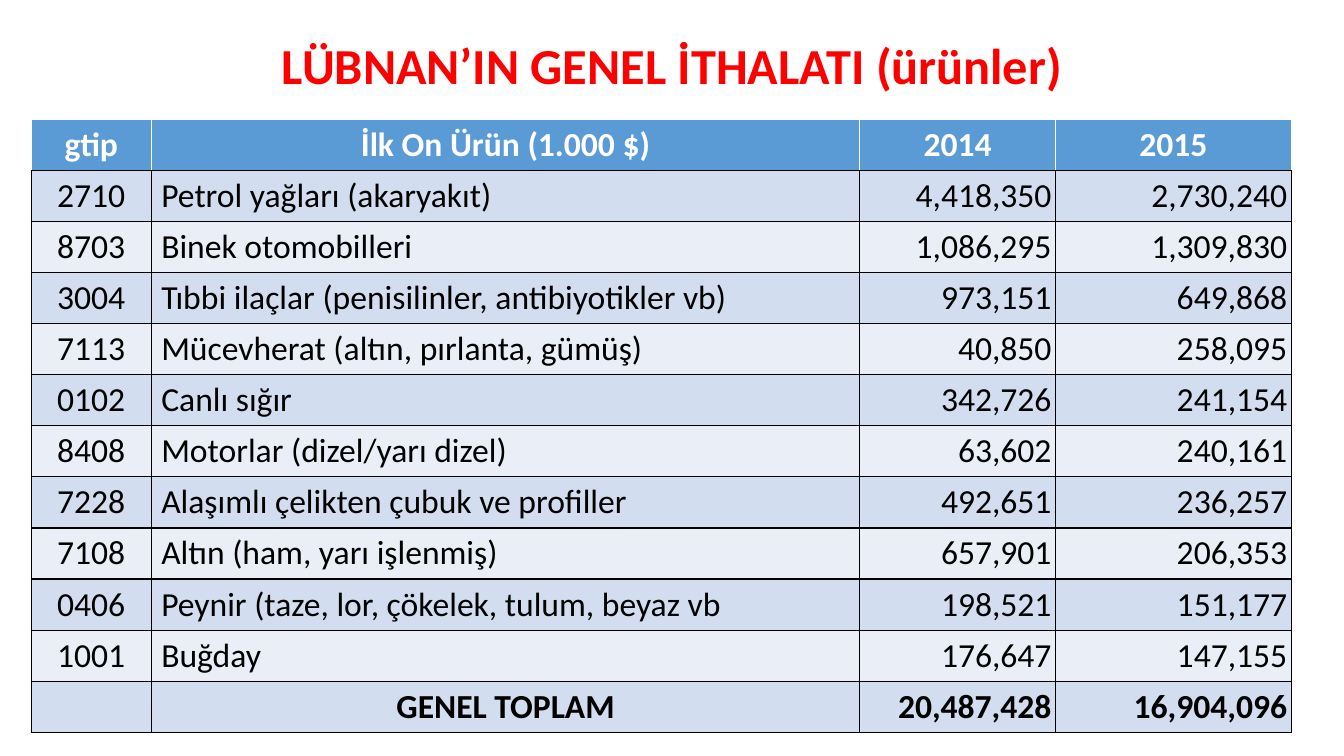
from dataclasses import dataclass

from lxml import etree
from pptx import Presentation
from pptx import util as u
from pptx.dml import color
from pptx.enum import text
from pptx.oxml import ns


@dataclass(frozen=True)
class Theme:
    font: str = "Calibri"
    title_size: int = 36
    table_size: int = 24
    title: str = "FF0000"
    header: str = "5B9BD5"
    dark_band: str = "D2DEEF"
    light_band: str = "EAEFF7"
    white: str = "FFFFFF"
    black: str = "000000"


THEME = Theme()
LEFT, CENTER, RIGHT = text.PP_ALIGN.LEFT, text.PP_ALIGN.CENTER, text.PP_ALIGN.RIGHT

TITLE = "LÜBNAN’IN GENEL İTHALATI (ürünler)"
HEADER = ("gtip", "İlk On Ürün (1.000 $)", "2014", "2015")
PRODUCTS = [
    ("2710", "Petrol yağları (akaryakıt)", "4,418,350", "2,730,240"),
    ("8703", "Binek otomobilleri", "1,086,295", "1,309,830"),
    ("3004", "Tıbbi ilaçlar (penisilinler, antibiyotikler vb)", "973,151", "649,868"),
    ("7113", "Mücevherat (altın, pırlanta, gümüş)", "40,850", "258,095"),
    ("0102", "Canlı sığır", "342,726", "241,154"),
    ("8408", "Motorlar (dizel/yarı dizel)", "63,602", "240,161"),
    ("7228", "Alaşımlı çelikten çubuk ve profiller", "492,651", "236,257"),
    ("7108", "Altın (ham, yarı işlenmiş)", "657,901", "206,353"),
    ("0406", "Peynir (taze, lor, çökelek, tulum, beyaz vb", "198,521", "151,177"),
    ("1001", "Buğday", "176,647", "147,155"),
]
TOTAL = ("", "GENEL TOPLAM", "20,487,428", "16,904,096")
COLUMN_WIDTHS = (3.02, 17.86, 4.93, 5.94)
ROW_HEIGHT = 1.28


def style_paragraph(para, size, rgb, align, bold):
    para.alignment = align
    para.font.name = THEME.font
    para.font.size = u.Pt(size)
    para.font.bold = bold
    para.font.color.rgb = color.RGBColor.from_string(rgb)


def add_title(page):
    box = page.shapes.title
    box.left, box.top = u.Cm(2.34), u.Cm(1.02)
    box.width, box.height = u.Cm(29.21), u.Cm(1.4)
    frame = box.text_frame
    frame.text = TITLE
    frame.word_wrap = True
    frame.auto_size = text.MSO_AUTO_SIZE.NONE
    frame.vertical_anchor = text.MSO_ANCHOR.MIDDLE
    para = frame.paragraphs[0]
    style_paragraph(para, THEME.title_size, THEME.title, CENTER, True)
    para.line_spacing = 0.9


def set_borders(cell, **side_colors):
    """Draw 1 pt cell borders; sides must come in the order L, R, T, B."""
    properties = cell._tc.get_or_add_tcPr()
    for side, rgb in side_colors.items():
        line = etree.SubElement(properties, ns.qn(f"a:ln{side}"), w=str(u.Pt(1)))
        fill = etree.SubElement(line, ns.qn("a:solidFill"))
        etree.SubElement(fill, ns.qn("a:srgbClr"), val=rgb)


def fill_cell(cell, value, fill, rgb, align, bold, edge):
    set_borders(cell, L=edge, R=edge, T=edge, B=THEME.black)
    cell.fill.solid()
    cell.fill.fore_color.rgb = color.RGBColor.from_string(fill)
    cell.text = value
    style_paragraph(cell.text_frame.paragraphs[0], THEME.table_size, rgb, align, bold)


def add_header_row(table):
    for cell, value in zip(table.rows[0].cells, HEADER):
        fill_cell(cell, value, THEME.header, THEME.white, CENTER, True, THEME.white)


def add_body_row(table, index, values, is_total):
    band = THEME.dark_band if index % 2 else THEME.light_band
    aligns = (CENTER, CENTER if is_total else LEFT, RIGHT, RIGHT)
    for cell, value, align in zip(table.rows[index].cells, values, aligns):
        fill_cell(cell, value, band, THEME.black, align, is_total, THEME.black)
        # Figures sit close to the cell edge
        if align == RIGHT:
            cell.vertical_anchor = text.MSO_ANCHOR.MIDDLE
            cell.margin_left = cell.margin_right = u.Cm(0.1)
            cell.margin_top = cell.margin_bottom = u.Cm(0.1)


def add_import_table(page):
    body = PRODUCTS + [TOTAL]
    row_count = len(body) + 1
    table = page.shapes.add_table(
        row_count, len(HEADER), u.Cm(0.79), u.Cm(3),
        u.Cm(sum(COLUMN_WIDTHS)), u.Cm(ROW_HEIGHT * row_count)).table
    for column, width in zip(table.columns, COLUMN_WIDTHS):
        column.width = u.Cm(width)
    for row in table.rows:
        row.height = u.Cm(ROW_HEIGHT)
    add_header_row(table)
    for index, values in enumerate(body, start=1):
        add_body_row(table, index, values, values is TOTAL)


def main():
    deck = Presentation()
    deck.slide_width, deck.slide_height = u.Cm(33.87), u.Cm(19.05)
    # Title-only layout
    page = deck.slides.add_slide(deck.slide_layouts[5])
    add_title(page)
    add_import_table(page)
    deck.save("out.pptx")


if __name__ == "__main__":
    main()
